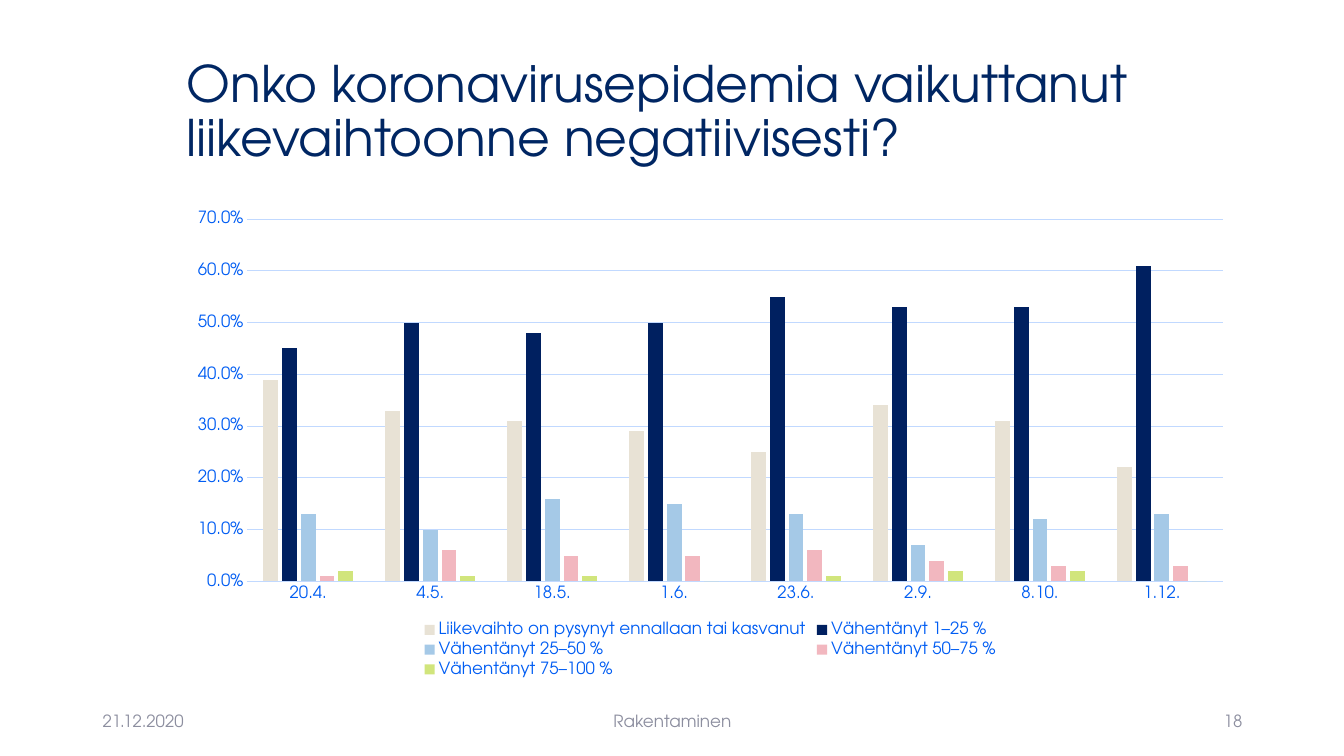
from pptx import Presentation, util as u
from pptx.chart.data import CategoryChartData
from pptx.dml.color import RGBColor
from pptx.enum import chart as charts, text

FONT = "TeX Gyre Adventor"
NAVY = RGBColor(0x00, 0x26, 0x63)
BLUE = RGBColor(0x00, 0x5D, 0xF3)
PALE_BLUE = RGBColor(0xC1, 0xD9, 0xFF)
GREY = RGBColor(0x8C, 0x8E, 0x9F)
SAND = RGBColor(0xE8, 0xE2, 0xD5)
DARK_BLUE = RGBColor(0x00, 0x20, 0x60)
SKY = RGBColor(0xA5, 0xC9, 0xE7)
PINK = RGBColor(0xF2, 0xB7, 0xBF)
LIME = RGBColor(0xD1, 0xE5, 0x7C)


def set_font(font, size, color):
    font.name = FONT
    font.size = u.Pt(size)
    font.bold = False
    font.color.rgb = color


presentation = Presentation()
presentation.slide_width = u.Inches(13.33)
presentation.slide_height = u.Inches(7.5)
slide = presentation.slides.add_slide(presentation.slide_layouts[5])
content_left, content_width = u.Inches(1.75), u.Inches(10.59)

# Title
title = slide.shapes.title
title.left, title.top = content_left, u.Inches(0.4)
title.width, title.height = content_width, u.Inches(1.45)
title.text_frame.text = "Onko koronavirusepidemia vaikuttanut liikevaihtoonne negatiivisesti?"
title.text_frame.word_wrap = True
title.text_frame.auto_size = text.MSO_AUTO_SIZE.NONE
title.text_frame.vertical_anchor = text.MSO_ANCHOR.MIDDLE
paragraph = title.text_frame.paragraphs[0]
paragraph.alignment = text.PP_ALIGN.LEFT
paragraph.line_spacing = 0.9
set_font(paragraph.font, 36, NAVY)

# Chart
categories = ["20.4.", "4.5.", "18.5.", "1.6.", "23.6.", "2.9.", "8.10.", "1.12."]
answers = [
    ("Liikevaihto on pysynyt ennallaan tai kasvanut", SAND,
     [0.39, 0.33, 0.31, 0.29, 0.25, 0.34, 0.31, 0.22]),
    ("Vähentänyt 1–25 %", DARK_BLUE,
     [0.45, 0.5, 0.48, 0.5, 0.55, 0.53, 0.53, 0.61]),
    ("Vähentänyt 25–50 %", SKY,
     [0.13, 0.1, 0.16, 0.15, 0.13, 0.07, 0.12, 0.13]),
    ("Vähentänyt 50–75 %", PINK,
     [0.01, 0.06, 0.05, 0.05, 0.06, 0.04, 0.03, 0.03]),
    ("Vähentänyt 75–100 %", LIME,
     [0.02, 0.01, 0.01, 0, 0.01, 0.02, 0.02, 0]),
]
chart_data = CategoryChartData(number_format="0.0%")
chart_data.categories = categories
for name, color, values in answers:
    chart_data.add_series(name, values)
chart = slide.shapes.add_chart(
    charts.XL_CHART_TYPE.COLUMN_CLUSTERED, content_left, u.Inches(2),
    content_width, u.Inches(4.76), chart_data).chart
set_font(chart.font, 10, NAVY)
chart.has_title = False
chart.has_legend = True
chart.legend.position = charts.XL_LEGEND_POSITION.BOTTOM
chart.legend.include_in_layout = False
set_font(chart.legend.font, 12, BLUE)

plot = chart.plots[0]
plot.gap_width = 219
plot.overlap = -27
plot.vary_by_categories = False
for series, (name, color, values) in zip(plot.series, answers):
    series.format.fill.solid()
    series.format.fill.fore_color.rgb = color
    series.invert_if_negative = False

for axis in (chart.category_axis, chart.value_axis):
    axis.major_tick_mark = axis.minor_tick_mark = charts.XL_TICK_MARK.NONE
    set_font(axis.tick_labels.font, 12, BLUE)
value_axis = chart.value_axis
value_axis.minimum_scale, value_axis.maximum_scale = 0, 0.7
value_axis.major_unit = 0.1
value_axis.tick_labels.number_format = "0.0%"
value_axis.tick_labels.number_format_is_linked = False
value_axis.format.line.fill.background()
for line in (chart.category_axis.format.line, value_axis.major_gridlines.format.line):
    line.color.rgb = PALE_BLUE
    line.width = u.Pt(0.75)

# Footer
footer_items = [
    (0.92, 3, "21.12.2020", text.PP_ALIGN.LEFT),
    (4.42, 4.5, "Rakentaminen", text.PP_ALIGN.CENTER),
    (9.42, 3, "18", text.PP_ALIGN.RIGHT),
]
for left, width, wording, alignment in footer_items:
    box = slide.shapes.add_textbox(
        u.Inches(left), u.Inches(6.95), u.Inches(width), u.Inches(0.4))
    box.text_frame.text = wording
    box.text_frame.word_wrap = True
    box.text_frame.vertical_anchor = text.MSO_ANCHOR.MIDDLE
    paragraph = box.text_frame.paragraphs[0]
    paragraph.alignment = alignment
    set_font(paragraph.font, 12, GREY)

presentation.save("out.pptx")
